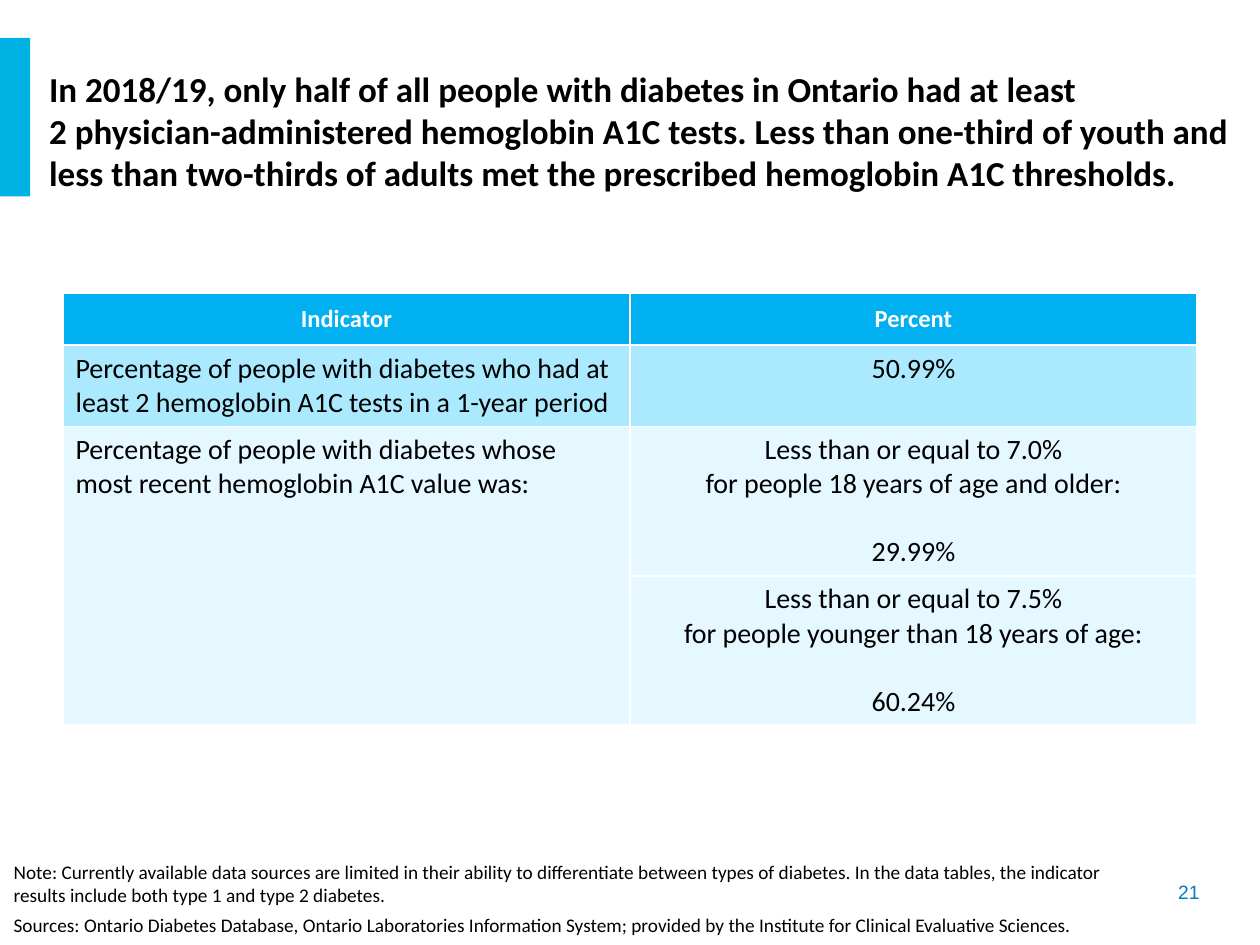
from copy import deepcopy

from pptx import Presentation
from pptx.dml.color import RGBColor
from pptx.enum.shapes import MSO_SHAPE
from pptx.enum.text import MSO_ANCHOR, PP_ALIGN
from pptx.oxml.ns import qn
from pptx.util import Inches, Pt

TITLE = (
    "In 2018/19, only half of all people with diabetes in Ontario had at least \v"
    "2 physician-administered hemoglobin A1C tests. Less than one-third of youth and "
    "less than two-thirds of adults met the prescribed hemoglobin A1C thresholds."
)
HEADERS = ["Indicator", "Percent"]
INDICATORS = [
    "Percentage of people with diabetes who had at least 2 hemoglobin A1C tests in a 1-year period",
    "Percentage of people with diabetes whose most recent hemoglobin A1C value was:",
]
PERCENTS = [
    ["50.99%"],
    ["Less than or equal to 7.0%", "for people 18 years of age and older:", "29.99%"],
    ["Less than or equal to 7.5%", "for people younger than 18 years of age:", "60.24%"],
]
NOTES = [
    "Note: Currently available data sources are limited in their ability to differentiate "
    "between types of diabetes. In the data tables, the indicator results include both "
    "type 1 and type 2 diabetes.",
    "Sources: Ontario Diabetes Database, Ontario Laboratories Information System; "
    "provided by the Institute for Clinical Evaluative Sciences.",
]
PAGE = "21"
ROW_HEIGHTS = [0.41, 0.62, 1.17, 1.17]
ROW_FILLS = ["00B0F0", "ABE9FF", "E5F8FF", "E5F8FF"]


def paint(target, color):
    target.fill.solid()
    target.fill.fore_color.rgb = RGBColor.from_string(color)


def write(frame, lines, size=16, color="000000", font="Calibri", bold=False,
          align=PP_ALIGN.LEFT, last_gap=0):
    frame.word_wrap = True
    for index, line in enumerate(lines):
        paragraph = frame.paragraphs[0] if index == 0 else frame.add_paragraph()
        paragraph.text = line
        paragraph.alignment = align
        paragraph.space_before = Pt(last_gap if 0 < index == len(lines) - 1 else 0)
        for run in paragraph.runs:
            run.font.size, run.font.name, run.font.bold = Pt(size), font, bold
            run.font.color.rgb = RGBColor.from_string(color)
        for line_break in paragraph._p.findall(qn("a:br")):
            line_break.append(deepcopy(paragraph.runs[0]._r.rPr))


def add_indicator_table(slide):
    table = slide.shapes.add_table(
        len(ROW_HEIGHTS), len(HEADERS), Inches(0.5), Inches(2.33),
        Inches(9), Inches(sum(ROW_HEIGHTS))).table
    table.horz_banding = False
    for row, height, color in zip(table.rows, ROW_HEIGHTS, ROW_FILLS):
        row.height = Inches(height)
        for cell in row.cells:
            paint(cell, color)
            cell.vertical_anchor = MSO_ANCHOR.MIDDLE
    for column, header in enumerate(HEADERS):
        write(table.cell(0, column).text_frame, [header], size=14, color="FFFFFF",
              bold=True, align=PP_ALIGN.CENTER)
    for row, indicator in enumerate(INDICATORS, 1):
        write(table.cell(row, 0).text_frame, [indicator])
    for row, percent in enumerate(PERCENTS, 1):
        write(table.cell(row, 1).text_frame, percent, align=PP_ALIGN.CENTER, last_gap=19.5)
    for row, column in [(1, 1), (2, 0)]:
        table.cell(row, column).vertical_anchor = MSO_ANCHOR.TOP
    table.cell(2, 0).merge(table.cell(3, 0))


def main():
    """Build the hemoglobin A1C indicator slide."""
    deck = Presentation()
    deck.slide_width, deck.slide_height = Inches(10), Inches(7.5)
    slide = deck.slides.add_slide(deck.slide_layouts[5])

    accent = slide.shapes.add_shape(
        MSO_SHAPE.RECTANGLE, 0, Inches(0.3), Inches(0.24), Inches(1.26))
    accent.shadow.inherit = False
    paint(accent, "00B2E3")
    accent.line.fill.background()

    title = slide.shapes.title
    title.left, title.top, title.width, title.height = map(Inches, (0.29, 0.48, 9.71, 1.11))
    title.text_frame.vertical_anchor = MSO_ANCHOR.MIDDLE
    write(title.text_frame, [TITLE], size=20, bold=True)

    add_indicator_table(slide)

    notes = slide.shapes.add_textbox(*map(Inches, (0.01, 6.78, 8.9, 0.71)))
    write(notes.text_frame, NOTES, size=11, last_gap=3.5)

    page = slide.shapes.add_textbox(*map(Inches, (8.45, 6.93, 1.17, 0.29)))
    page.text_frame.vertical_anchor = MSO_ANCHOR.MIDDLE
    write(page.text_frame, [PAGE], size=11, color="047BC1", font="Arial", align=PP_ALIGN.RIGHT)

    deck.save("out.pptx")


if __name__ == "__main__":
    main()
